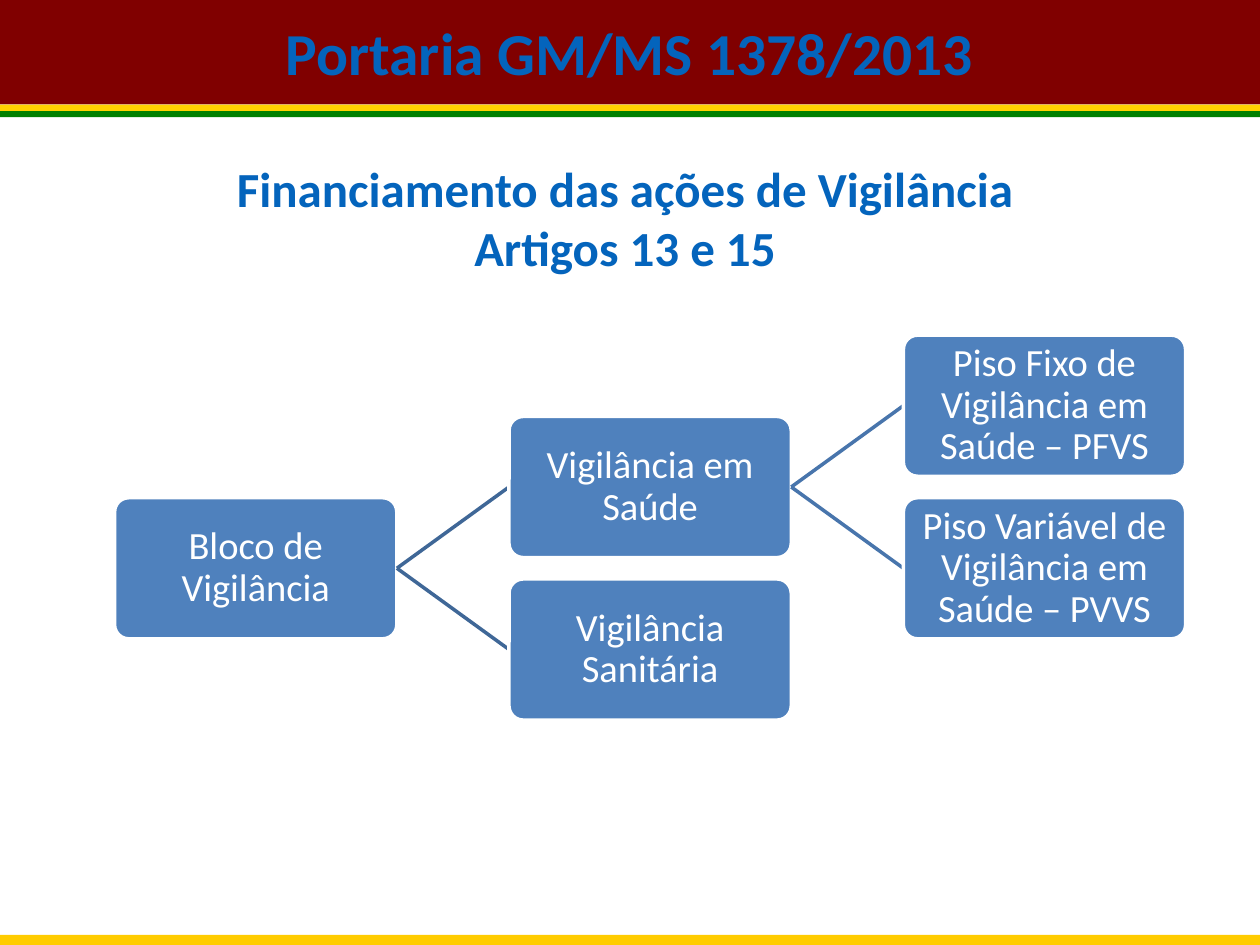
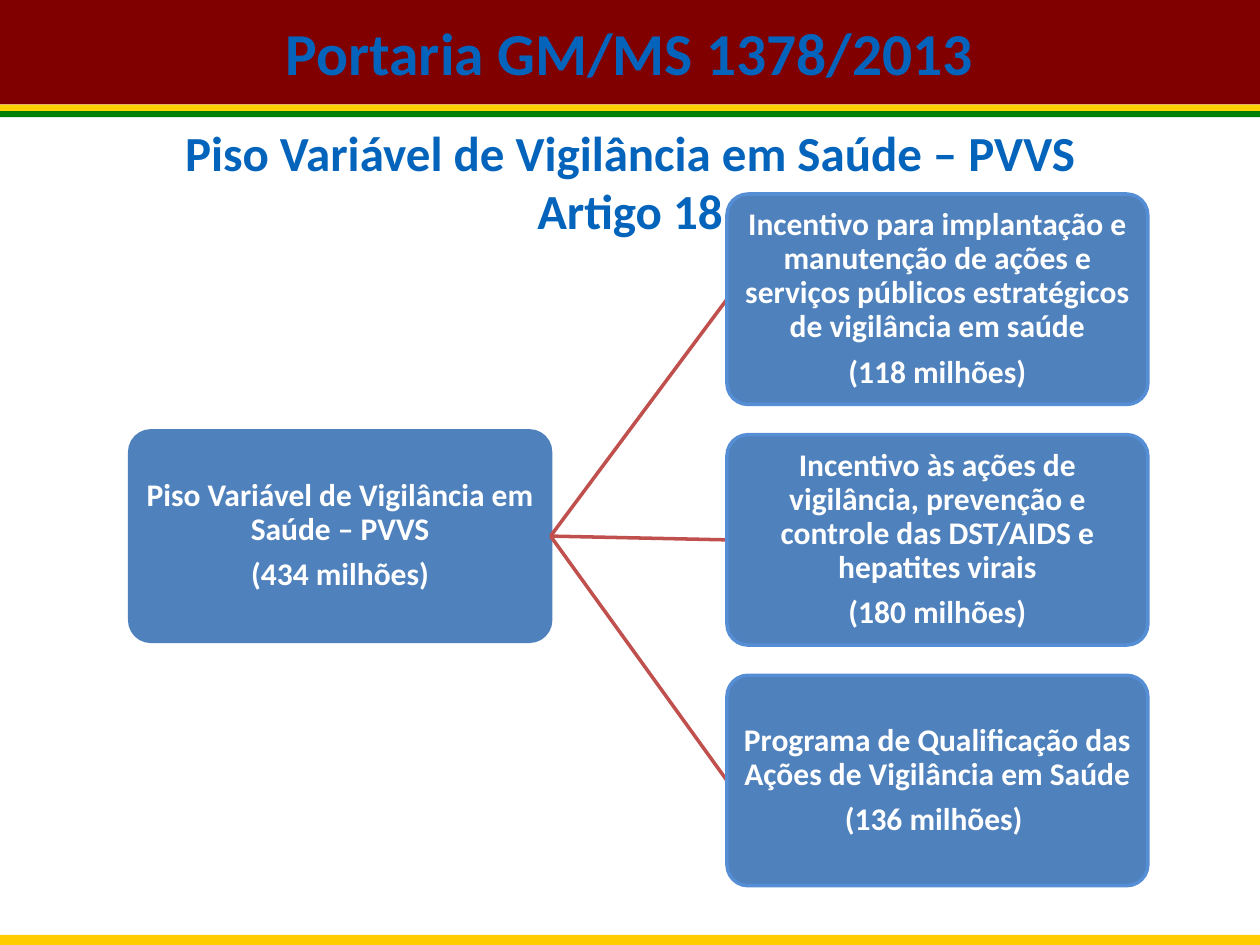
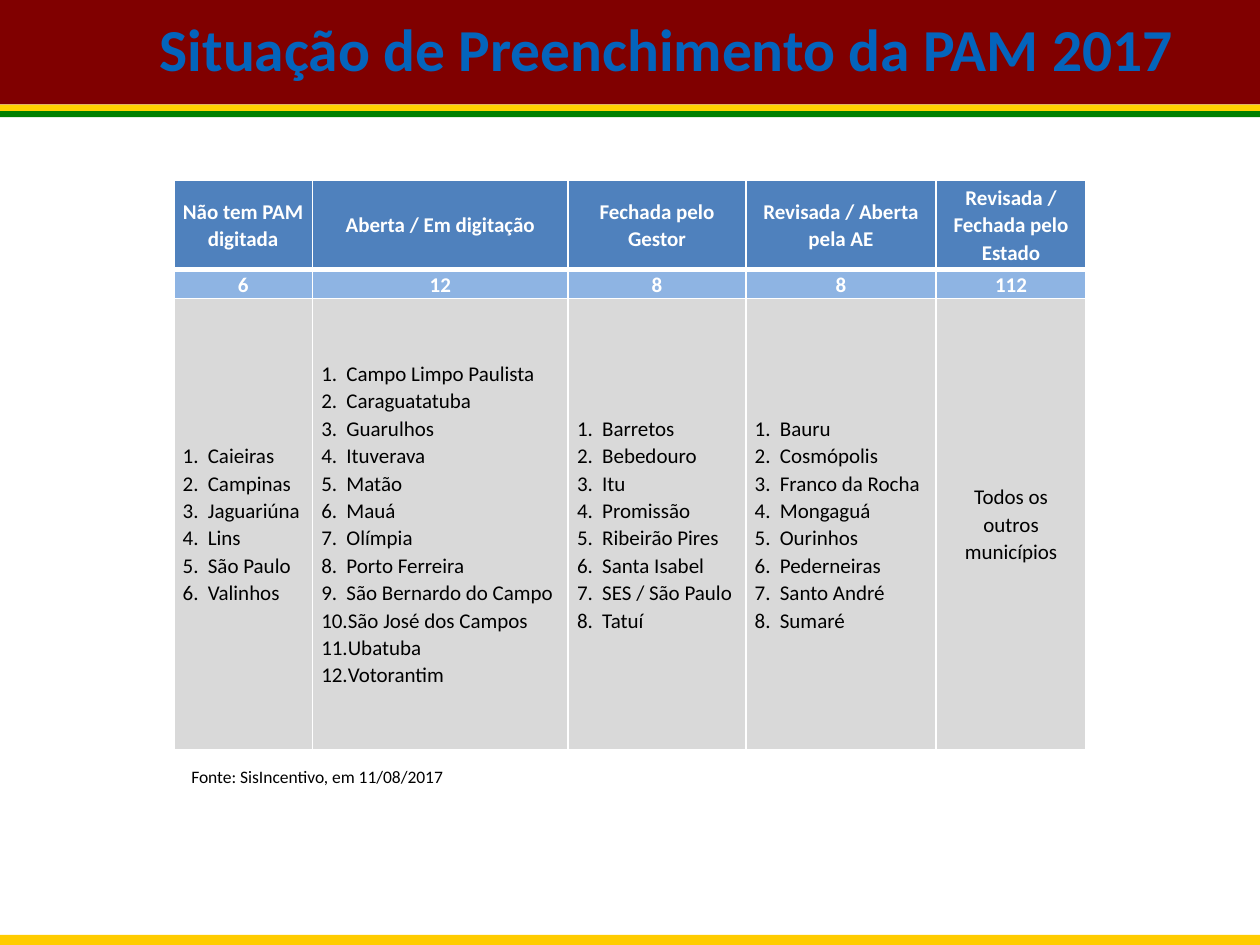
from dataclasses import dataclass

from lxml import etree
from pptx import Presentation
from pptx.dml.color import RGBColor
from pptx.enum.shapes import MSO_CONNECTOR, MSO_SHAPE
from pptx.enum.text import MSO_ANCHOR, MSO_AUTO_SIZE, PP_ALIGN
from pptx.oxml.ns import qn
from pptx.util import Inches, Pt

RECT, ROUNDED = MSO_SHAPE.RECTANGLE, MSO_SHAPE.ROUNDED_RECTANGLE
STRAIGHT = MSO_CONNECTOR.STRAIGHT
LEFT, CENTER = PP_ALIGN.LEFT, PP_ALIGN.CENTER
MIDDLE = MSO_ANCHOR.MIDDLE
GROW = MSO_AUTO_SIZE.SHAPE_TO_FIT_TEXT
LEFT_SIDE, RIGHT_SIDE = 1, 3


@dataclass(frozen=True)
class Theme:
    font: str = "Calibri"
    heading: str = "0464BC"
    maroon: str = "800000"
    yellow: str = "FFD200"
    green: str = "008000"
    amber: str = "FFCC00"
    box: str = "4F81BD"
    box_edge: str = "558ED5"
    count: str = "8EB4E3"
    body: str = "D9D9D9"
    branch: str = "3F6797"
    twig: str = "4875AC"
    red: str = "C0504D"
    white: str = "FFFFFF"
    black: str = "000000"
    title_size: int = 34
    subtitle_size: int = 28
    tree_size: int = 22
    funding_size: int = 18
    table_size: int = 12
    source_size: int = 10


THEME = Theme()

# top, height, colour
BANDS = [
    (0, 0.83, THEME.maroon),
    (0.88, 0.05, THEME.green),
    (0.83, 0.05, THEME.yellow),
    (7.42, 0.08, THEME.amber),
]

# Each tree node is (paragraphs, children).
TREE_SLIDES = [
    {
        "title": "Portaria GM/MS 1378/2013",
        "subtitle": ["Financiamento das ações de Vigilância", "Artigos 13 e 15"],
        "subtitle_at": (1.77, 1.21, 6.38, 1.04),
        "tree": (["Bloco de Vigilância"], [
            (["Vigilância em Saúde"], [
                (["Piso Fixo de Vigilância em Saúde – PFVS"], []),
                (["Piso Variável de Vigilância em Saúde – PVVS"], []),
            ]),
            (["Vigilância Sanitária"], []),
        ]),
        "layout": {
            "root": (0.91, 3.95), "box": (2.24, 1.12), "step": 3.13,
            "pitch": 1.29, "drop": 0, "inset": 0.02,
            "edges": [THEME.white] * 3, "links": [THEME.branch, THEME.twig],
            "text": {"size": THEME.tree_size, "bold": False},
        },
    },
    {
        "title": "Portaria GM/MS 1378/2013",
        "subtitle": ["Piso Variável de Vigilância em Saúde – PVVS", "Artigo 18"],
        "subtitle_at": (0.51, 0.92, 8.98, 1.04),
        "tree": (["Piso Variável de Vigilância em Saúde – PVVS", "(434 milhões)"], [
            (["Incentivo para implantação e manutenção de ações e serviços "
              "públicos estratégicos de vigilância em saúde", "(118 milhões)"], []),
            (["Incentivo às ações de vigilância, prevenção e controle das "
              "DST/AIDS e hepatites virais", "(180 milhões)"], []),
            (["Programa de Qualificação das Ações de Vigilância em Saúde",
              "(136 milhões) "], []),
        ]),
        "layout": {
            "root": (1.03, 3.42), "box": (3.34, 1.67), "step": 4.74,
            "pitch": 1.91, "drop": 0.03, "inset": 0.01,
            "edges": [THEME.box, THEME.box_edge], "links": [THEME.red],
            "text": {"size": THEME.funding_size, "bold": True},
        },
    },
]
TITLE_AT = (1.69, 0.08, 6.61, 0.67)

PAM_TITLE = "Situação de Preenchimento da PAM 2017"
PAM_TITLE_AT = (1.01, 0.05, 8.56, 0.67)
PAM_SOURCE = "Fonte: SisIncentivo, em 11/08/2017"
PAM_SOURCE_AT = (1.42, 6.03, 2.24, 0.27)
PAM_AT = (1.38, 1.43, 7.24, 4.52)
PAM_ROWS = [0.71, 0.23, 3.58]
# width, status, count, municipalities
PAM_COLUMNS = [
    (1.1, "Não tem PAM digitada", "6",
     ["Caieiras", "Campinas", "Jaguariúna", "Lins", "São Paulo", "Valinhos"]),
    (2.03, "Aberta / Em digitação", "12",
     ["Campo Limpo Paulista", "Caraguatatuba", "Guarulhos", "Ituverava",
      "Matão", "Mauá", "Olímpia", "Porto Ferreira", "São Bernardo do Campo",
      "São José dos Campos", "Ubatuba", "Votorantim"]),
    (1.41, "Fechada pelo Gestor", "8",
     ["Barretos", "Bebedouro", "Itu", "Promissão", "Ribeirão Pires",
      "Santa Isabel", "SES / São Paulo", "Tatuí"]),
    (1.51, "Revisada / Aberta pela AE", "8",
     ["Bauru", "Cosmópolis", "Franco da Rocha", "Mongaguá", "Ourinhos",
      "Pederneiras", "Santo André", "Sumaré"]),
    (1.19, "Revisada / Fechada pelo Estado", "112",
     ["Todos os outros municípios"]),
]


def inches(values):
    return [Inches(value) for value in values]


def apply(target, values):
    for name, value in values.items():
        setattr(target, name, value)


def paint(fill, color):
    fill.solid()
    fill.fore_color.rgb = RGBColor.from_string(color)


def write(frame, lines, color, size, bold=False, align=CENTER, spacing=None,
          gap=0, numbered=False):
    """Fill a text frame with one paragraph per line; gap is in points."""
    for index, line in enumerate(lines):
        paragraph = frame.add_paragraph() if index else frame.paragraphs[0]
        if numbered:
            properties = paragraph._p.get_or_add_pPr()
            properties.set("marL", str(Inches(0.2)))
            properties.set("indent", str(Inches(-0.2)))
            etree.SubElement(properties, qn("a:buAutoNum"), type="arabicPeriod")
        apply(paragraph, {"alignment": align, "line_spacing": spacing})
        if index:
            paragraph.space_before = Pt(gap)
        run = paragraph.add_run()
        run.text = line
        apply(run.font, {"name": THEME.font, "size": Pt(size), "bold": bold})
        run.font.color.rgb = RGBColor.from_string(color)


def add_text(slide, at, lines, color, size, wrap=True, **style):
    frame = slide.shapes.add_textbox(*inches(at)).text_frame
    apply(frame, {"word_wrap": wrap, "auto_size": GROW})
    write(frame, lines, color, size, **style)


def start_slide(deck, title, title_at):
    slide = deck.slides.add_slide(deck.slide_layouts[6])
    for top, height, color in BANDS:
        band = slide.shapes.add_shape(RECT, *inches((0, top, 10, height)))
        band.shadow.inherit = False
        paint(band.fill, color)
        band.line.fill.background()
    add_text(slide, title_at, [title], THEME.heading, THEME.title_size, bold=True)
    return slide


def add_link(slide, color):
    link = slide.shapes.add_connector(STRAIGHT, 0, 0, 0, 0)
    etree.SubElement(link._element.spPr, qn("a:effectLst"))
    link.line.width = Pt(2)
    paint(link.line.fill, color)
    return link


def add_box(slide, left, top, lines, edge, layout):
    box = slide.shapes.add_shape(ROUNDED, *inches((left, top, *layout["box"])))
    box.adjustments[0] = 0.1
    box.shadow.inherit = False
    paint(box.fill, THEME.box)
    box.line.width = Pt(2)
    paint(box.line.fill, edge)
    inset = Inches(layout["inset"])
    apply(box.text_frame, {
        "word_wrap": True, "vertical_anchor": MIDDLE,
        "margin_left": inset, "margin_right": inset,
        "margin_top": inset, "margin_bottom": inset,
    })
    write(box.text_frame, lines, THEME.white, spacing=0.9,
          gap=0.35 * layout["text"]["size"], **layout["text"])
    return box


def add_tree(slide, node, left, top, layout, level=0):
    """Draw a node and its children, centred beside it; return its box."""
    lines, children = node
    parent = add_box(slide, left, top, lines, layout["edges"][level], layout)
    for index, child in enumerate(children):
        offset = (index - (len(children) - 1) / 2) * layout["pitch"]
        link = add_link(slide, layout["links"][level])
        child_box = add_tree(slide, child, left + layout["step"],
                             top + layout["drop"] + offset, layout, level + 1)
        link.begin_connect(parent, RIGHT_SIDE)
        link.end_connect(child_box, LEFT_SIDE)
    return parent


def add_borders(cell, widths):
    """Give a cell white borders; widths are points for left, right, top, bottom."""
    properties = cell._tc.get_or_add_tcPr()
    for index, (side, width) in enumerate(zip("LRTB", widths)):
        border = etree.Element(qn(f"a:ln{side}"), w=str(Pt(width)))
        fill = etree.SubElement(border, qn("a:solidFill"))
        etree.SubElement(fill, qn("a:srgbClr"), val=THEME.white)
        properties.insert(index, border)


def add_pam_table(slide):
    table = slide.shapes.add_table(
        len(PAM_ROWS), len(PAM_COLUMNS), *inches(PAM_AT)).table
    for row, height in zip(table.rows, PAM_ROWS):
        row.height = Inches(height)
    # fill, text colour, bold, border widths
    row_styles = [
        (THEME.box, THEME.white, True, (1, 1, 1, 3)),
        (THEME.count, THEME.white, True, (1, 1, 3, 1)),
        (THEME.body, THEME.black, False, (1, 1, 1, 1)),
    ]
    for column, (width, status, count, places) in enumerate(PAM_COLUMNS):
        table.columns[column].width = Inches(width)
        contents = [[status], [count], places]
        for row, (lines, row_style) in enumerate(zip(contents, row_styles)):
            fill, color, bold, borders = row_style
            numbered = len(lines) > 1
            cell = table.cell(row, column)
            apply(cell, {
                "vertical_anchor": MIDDLE, "margin_top": 0, "margin_bottom": 0,
                "margin_left": Inches(0.07), "margin_right": Inches(0.07),
            })
            paint(cell.fill, fill)
            add_borders(cell, borders)
            write(cell.text_frame, lines, color, THEME.table_size, bold=bold,
                  align=LEFT if numbered else CENTER, spacing=1.07,
                  numbered=numbered)


def main():
    deck = Presentation()
    apply(deck, {"slide_width": Inches(10), "slide_height": Inches(7.5)})
    for content in TREE_SLIDES:
        slide = start_slide(deck, content["title"], TITLE_AT)
        add_text(slide, content["subtitle_at"], content["subtitle"],
                 THEME.heading, THEME.subtitle_size, bold=True)
        layout = content["layout"]
        add_tree(slide, content["tree"], *layout["root"], layout)
    slide = start_slide(deck, PAM_TITLE, PAM_TITLE_AT)
    add_pam_table(slide)
    add_text(slide, PAM_SOURCE_AT, [PAM_SOURCE], THEME.black, THEME.source_size,
             wrap=False, align=LEFT)
    deck.save("out.pptx")


if __name__ == "__main__":
    main()
